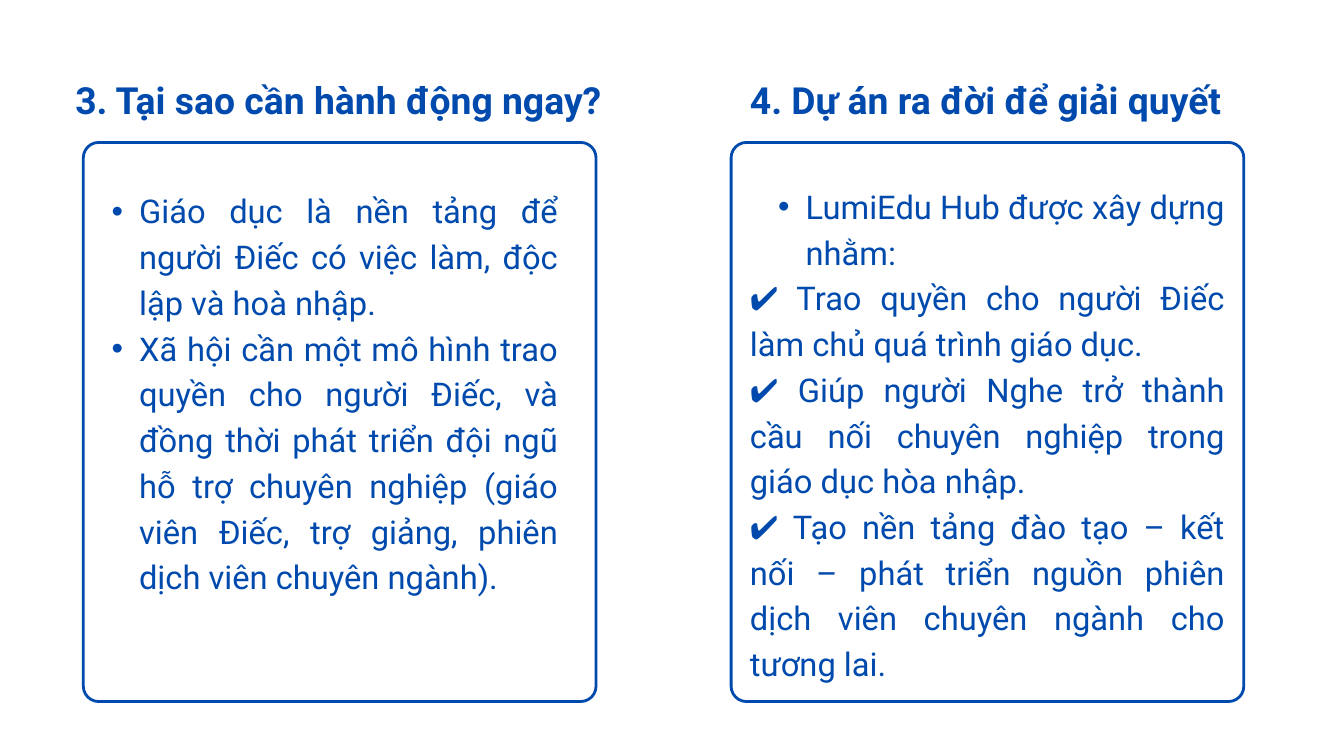
from lxml.etree import SubElement
from pptx import Presentation
from pptx.dml.color import RGBColor
from pptx.enum.shapes import MSO_SHAPE as Shape
from pptx.enum.text import MSO_ANCHOR as Anchor, MSO_AUTO_SIZE as AutoSize, PP_ALIGN as Align
from pptx.oxml.ns import qn
from pptx.util import Inches, Pt

COLORS = {"blue": "004AAD", "white": "FFFFFF"}
FONT = "Roboto"
BULLET = "• "


def rgb(name):
    return RGBColor.from_string(COLORS[name])


class Deck:
    """Holds the style and the current slide; lengths are percent of the slide."""

    def __init__(self, width, height):
        self.prs = Presentation()
        self.prs.slide_width, self.prs.slide_height = Inches(width), Inches(height)
        self.s = self.prs.slides.add_slide(self.prs.slide_layouts[5])
        self.s.background.fill.solid()
        self.s.background.fill.fore_color.rgb = rgb("white")

    def box(self, x, y, w, h):
        pw, ph = self.prs.slide_width / 100, self.prs.slide_height / 100
        return [int(v) for v in (x * pw, y * ph, w * pw, h * ph)]

    def frame(self, *place):
        sp = self.s.shapes.add_shape(Shape.ROUNDED_RECTANGLE, *self.box(*place))
        sp.adjustments[0] = 0.03
        sp.shadow.inherit = False
        sp.fill.solid()
        sp.fill.fore_color.rgb = rgb("white")
        sp.line.color.rgb = rgb("blue")
        sp.line.width = Pt(3)

    def set_text(self, sp, lines, size, spacing, bold=False):
        tf = sp.text_frame
        tf.word_wrap = True
        tf.auto_size = AutoSize.SHAPE_TO_FIT_TEXT
        tf.vertical_anchor = Anchor.TOP
        tf.margin_left = tf.margin_right = tf.margin_top = tf.margin_bottom = 0
        tf.text = "\n".join(line.removeprefix(BULLET) for line in lines)
        for p, line in zip(tf.paragraphs, lines):
            p.alignment = Align.JUSTIFY
            p.line_spacing = Pt(spacing)
            p.space_before = p.space_after = Pt(0)
            if line.startswith(BULLET):
                self.bullet(p)
            for r in p.runs:
                r.font.name, r.font.size, r.font.bold = FONT, Pt(size), bold
                r.font.color.rgb = rgb("blue")

    def bullet(self, p):
        p.level = 1
        pPr = p._p.get_or_add_pPr()
        pPr.set("marL", str(Inches(0.83)))
        pPr.set("indent", str(Inches(-0.41)))
        SubElement(pPr, qn("a:buFont")).set("typeface", "Arial")
        SubElement(pPr, qn("a:buChar")).set("char", BULLET.strip())

    def title(self, text, *place):
        sp = self.s.shapes.title
        sp.left, sp.top, sp.width, sp.height = self.box(*place)
        self.set_text(sp, [text], 40, 56, bold=True)

    def heading(self, text, *place):
        sp = self.s.shapes.add_textbox(*self.box(*place))
        self.set_text(sp, [text], 40, 56, bold=True)

    def body(self, lines, *place):
        sp = self.s.shapes.add_textbox(*self.box(*place))
        self.set_text(sp, lines, 35, 49)


def main():
    deck = Deck(20, 11.25)

    # Headings
    deck.title("3. Tại sao cần hành động ngay?", 5.6, 9.16, 39.3, 6.67)
    deck.heading("4. Dự án ra đời để giải quyết", 55.8, 9.16, 35.35, 6.67)

    # Frames
    for x in (6.2, 54.4):
        deck.frame(x, 18.84, 38.15, 73.96)

    # Reasons to act
    deck.body([
        "• Giáo dục là nền tảng để người Điếc có việc làm, độc lập và hoà nhập.",
        "• Xã hội cần một mô hình trao quyền cho người Điếc, và đồng thời phát triển "
        "đội ngũ hỗ trợ chuyên nghiệp (giáo viên Điếc, trợ giảng, phiên dịch viên "
        "chuyên ngành).",
    ], 6.2, 24.44, 35.35, 54.13)

    # Project goals
    deck.body([
        "• LumiEdu Hub được xây dựng nhằm:",
        "✔ Trao quyền cho người Điếc làm chủ quá trình giáo dục.",
        "✔ Giúp người Nghe trở thành cầu nối chuyên nghiệp trong giáo dục hòa nhập.",
        "✔ Tạo nền tảng đào tạo – kết nối – phát triển nguồn phiên dịch viên "
        "chuyên ngành cho tương lai.",
    ], 55.8, 23.82, 35.35, 66.13)

    deck.prs.save("out.pptx")


if __name__ == "__main__":
    main()
